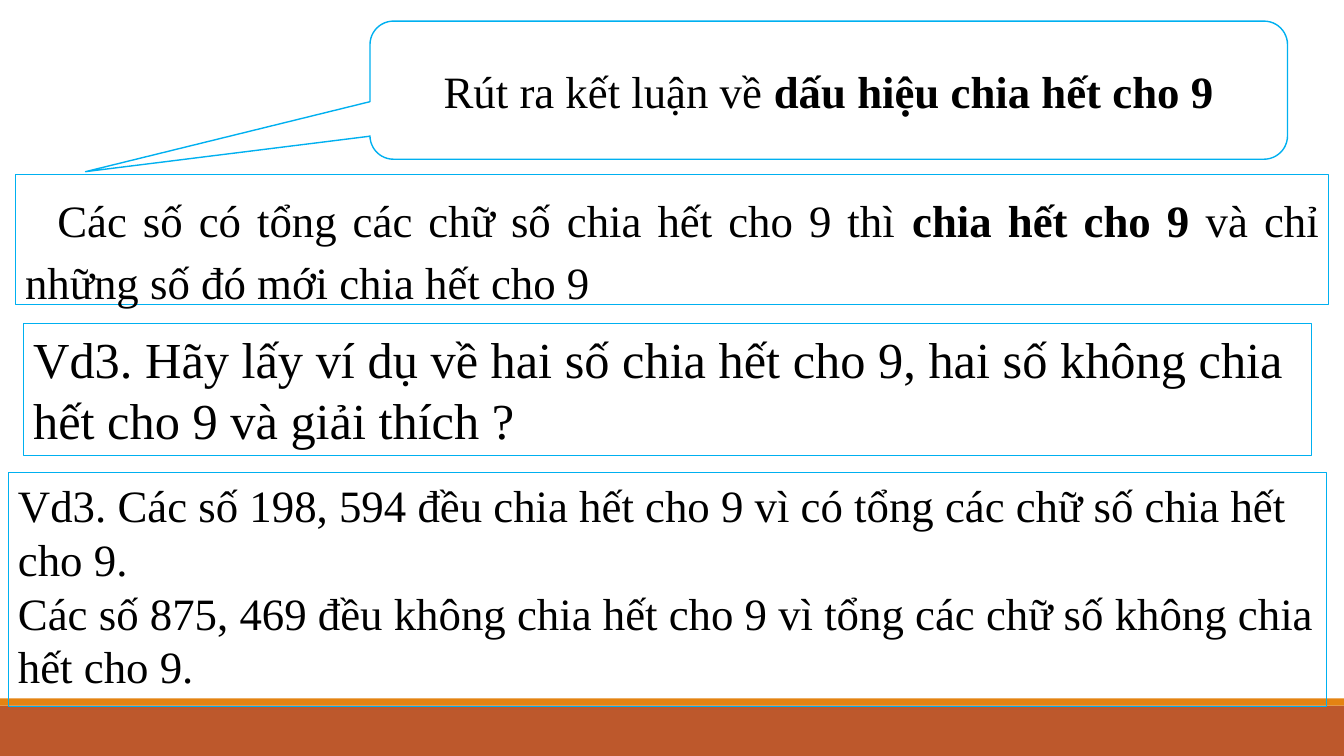
import pptx
import pptx.util
import pptx.dml.color
import pptx.enum.shapes
import pptx.enum.text

SCALE = 9144
FONT = "Times New Roman"
COLOURS = {
    "white": "FFFFFF",
    "text": "000000",
    "outline": "00B0F0",
    "band": "BD582C",
    "stripe": "E48312",
}
SHAPES = pptx.enum.shapes.MSO_SHAPE
ALIGN = pptx.enum.text.PP_ALIGN
ANCHOR = pptx.enum.text.MSO_ANCHOR


def px(length):
    return pptx.util.Emu(length * SCALE)


def colour(name):
    return pptx.dml.color.RGBColor.from_string(COLOURS[name])


def add_box(page, box, kind=SHAPES.RECTANGLE, fill=None, line_width=None):
    shape = page.shapes.add_shape(kind, *map(px, box))
    shape.shadow.inherit = False
    if fill:
        shape.fill.solid()
        shape.fill.fore_color.rgb = colour(fill)
    else:
        shape.fill.background()
    if line_width:
        shape.line.color.rgb = colour("outline")
        shape.line.width = pptx.util.Pt(line_width)
    else:
        shape.line.fill.background()
    return shape


def write_text(shape, paragraphs, size, align=ALIGN.LEFT, anchor=ANCHOR.TOP):
    frame = shape.text_frame
    frame.word_wrap = True
    frame.vertical_anchor = anchor
    for index, pieces in enumerate(paragraphs):
        para = frame.add_paragraph() if index else frame.paragraphs[0]
        para.alignment = align
        para.font.name = FONT
        para.font.size = pptx.util.Pt(size)
        para.font.color.rgb = colour("text")
        for text, bold in pieces:
            span = para.add_run()
            span.text = text
            span.font.bold = bold
    return frame


def add_footer(page, box):
    left, top, width, height = box
    stripe = 7
    add_box(page, (left, top + stripe, width, height - stripe), fill="band")
    add_box(page, (left, top, width, stripe), fill="stripe")


def add_rule(page, box):
    shape = add_box(page, box, line_width=0.75)
    frame = write_text(shape, [[
        ("Các số có tổng các chữ số chia hết cho 9 thì ", False),
        ("chia hết cho 9 ", True),
        ("và chỉ những số đó mới chia hết cho 9", False),
    ]], 32, ALIGN.JUSTIFY)
    frame.margin_top = px(10)
    para = frame.paragraphs[0]
    para.line_spacing = 1.15
    para._p.get_or_add_pPr().set("indent", str(px(32)))


def add_callout(page, box):
    shape = add_box(page, box, SHAPES.ROUNDED_RECTANGULAR_CALLOUT, "white", 1)
    for index, value in enumerate((-0.81, 0.59, 0.17)):
        shape.adjustments[index] = value
    write_text(shape, [[
        ("Rút ra kết luận về ", False),
        ("dấu hiệu chia hết cho 9", True),
    ]], 32, ALIGN.CENTER, ANCHOR.MIDDLE)


def add_example(page, box, lines, size):
    shape = add_box(page, box, line_width=0.75)
    write_text(shape, [[(line, False)] for line in lines], size)


def main():
    deck = pptx.Presentation()
    deck.slide_width, deck.slide_height = px(1333), px(750)
    page = deck.slides.add_slide(deck.slide_layouts[6])
    page.background.fill.solid()
    page.background.fill.fore_color.rgb = colour("white")
    add_footer(page, (0, 693, 1333, 57))
    add_rule(page, (15, 173, 1303, 129))
    add_callout(page, (367, 21, 910, 137))
    add_example(page, (23, 321, 1278, 131), [
        "Vd3. Hãy lấy ví dụ về hai số chia hết cho 9, "
        "hai số không chia hết cho 9 và giải thích ?",
    ], 36)
    add_example(page, (8, 469, 1308, 232), [
        "Vd3. Các số 198, 594 đều chia hết cho 9 "
        "vì có tổng các chữ số chia hết cho 9.",
        "Các số 875, 469 đều không chia hết cho 9 "
        "vì tổng các chữ số không chia hết cho 9.",
    ], 32)
    deck.save("out.pptx")


if __name__ == "__main__":
    main()
